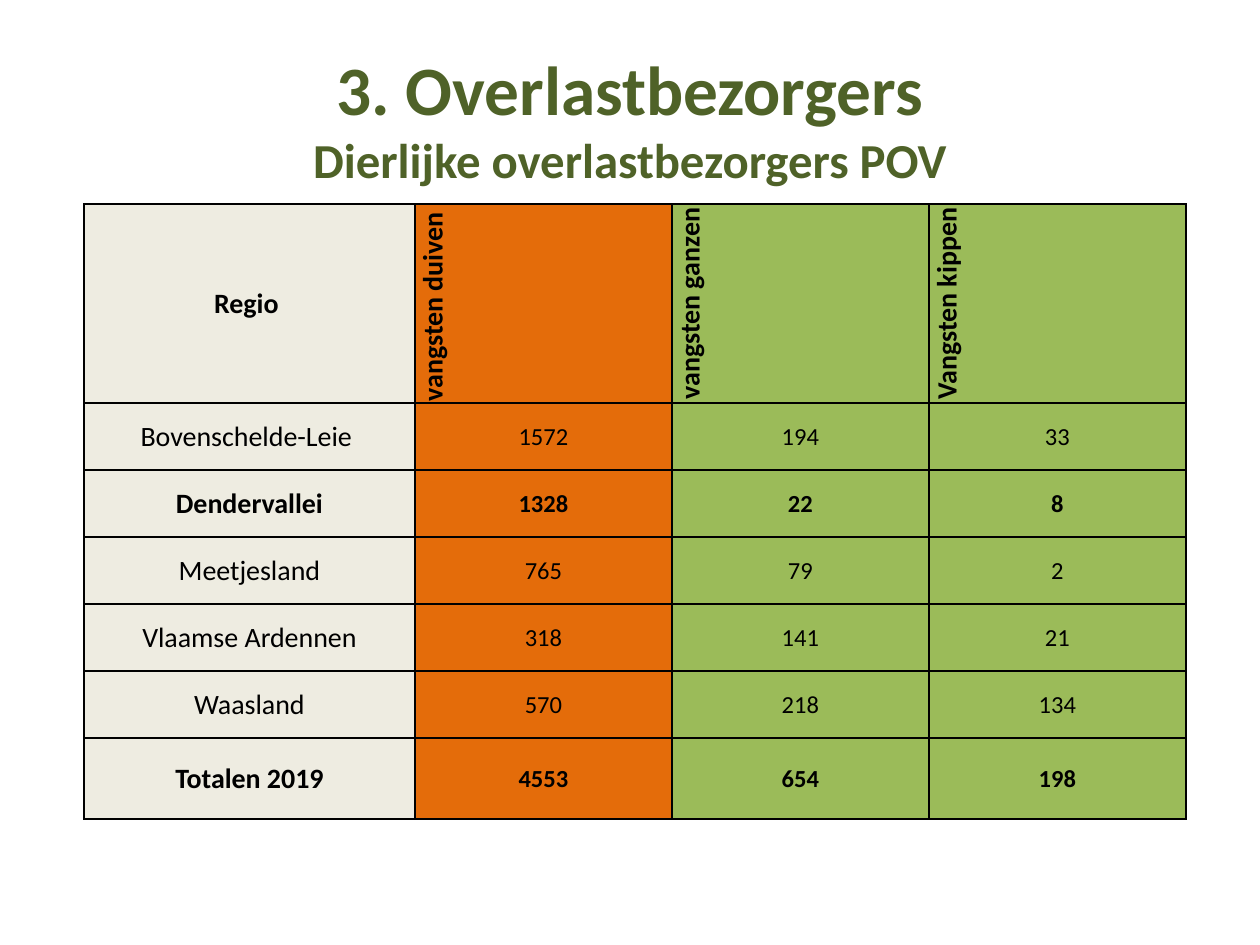
from dataclasses import dataclass

from lxml import etree
from pptx import Presentation
from pptx.dml.color import RGBColor
from pptx.enum.text import MSO_ANCHOR, MSO_AUTO_SIZE, PP_ALIGN
from pptx.oxml.ns import qn
from pptx.slide import Slide
from pptx.table import _Cell
from pptx.util import Emu, Pt

MIDDLE = MSO_ANCHOR.MIDDLE
CENTER = PP_ALIGN.CENTER
NO_AUTOFIT = MSO_AUTO_SIZE.NONE
PX_PER_INCH = 126


@dataclass(frozen=True)
class Theme:
    font: str = "Calibri"
    title: str = "4F6228"
    text: str = "000000"
    border: str = "000000"
    region: str = "EEECE1"
    pigeons: str = "E46C0A"
    poultry: str = "9BBB59"
    title_size: float = 39.6
    subtitle_size: float = 27.9
    label_size: int = 16
    value_size: int = 14


@dataclass(frozen=True)
class Row:
    cells: tuple[str, ...]
    height: int = 67
    bold: bool = False
    header: bool = False


THEME = Theme()
COLUMN_FILLS = (THEME.region, THEME.pigeons, THEME.poultry, THEME.poultry)
COLUMN_WIDTHS = (331, 257, 257, 257)
ROWS = (
    Row(("Regio ", "vangsten duiven ", "vangsten ganzen", "Vangsten kippen "),
        height=170, bold=True, header=True),
    Row(("Bovenschelde-Leie ", "1572", "194", "33")),
    Row(("Dendervallei", "1328", "22", "8"), bold=True),
    Row(("Meetjesland", "765", "79", "2")),
    Row(("Vlaamse Ardennen", "318", "141", "21")),
    Row(("Waasland", "570", "218", "134")),
    Row(("Totalen 2019", "4553", "654", "198"), height=81, bold=True),
)


def px(n: int) -> Emu:
    return Emu(round(n * 914400 / PX_PER_INCH))


def add_title(s: Slide, title: str, subtitle: str) -> None:
    sp = s.shapes.title
    sp.left, sp.top, sp.width, sp.height = px(63), px(38), px(1134), px(158)
    tf = sp.text_frame
    tf.auto_size = NO_AUTOFIT
    tf.vertical_anchor = MIDDLE
    p = tf.paragraphs[0]
    p.alignment = CENTER
    for text, size in ((title, THEME.title_size), (subtitle, THEME.subtitle_size)):
        if p.runs:
            p.add_line_break()
        r = p.add_run()
        r.text = text
        r.font.size = Pt(size)
    p.font.name = THEME.font
    p.font.bold = True
    p.font.color.rgb = RGBColor.from_string(THEME.title)
    for r in p.runs:
        r.font.bold = True


def add_borders(cell: _Cell) -> None:
    tc_pr = cell._tc.get_or_add_tcPr()
    for side in ("a:lnL", "a:lnR", "a:lnT", "a:lnB"):
        ln = etree.SubElement(tc_pr, qn(side), w=str(Pt(1)))
        fill = etree.SubElement(ln, qn("a:solidFill"))
        etree.SubElement(fill, qn("a:srgbClr"), val=THEME.border)


def fill_cell(cell: _Cell, text: str, fill: str, size: int, bold: bool, vertical: bool) -> None:
    add_borders(cell)
    cell.fill.solid()
    cell.fill.fore_color.rgb = RGBColor.from_string(fill)
    cell.vertical_anchor = MIDDLE
    cell.margin_left = cell.margin_right = cell.margin_top = px(1)
    cell.margin_bottom = 0
    if vertical:
        cell._tc.get_or_add_tcPr().set("vert", "vert270")
    p = cell.text_frame.paragraphs[0]
    p.text = text
    p.alignment = CENTER
    p.font.name = THEME.font
    p.font.size = Pt(size)
    p.font.bold = bold
    p.font.color.rgb = RGBColor.from_string(THEME.text)


def add_catch_table(s: Slide, left: int, top: int) -> None:
    width, height = sum(COLUMN_WIDTHS), sum(row.height for row in ROWS)
    table = s.shapes.add_table(len(ROWS), len(COLUMN_WIDTHS),
                               px(left), px(top), px(width), px(height)).table
    table.first_row = table.horz_banding = False
    for column, column_width in zip(table.columns, COLUMN_WIDTHS):
        column.width = px(column_width)
    for i, row in enumerate(ROWS):
        table.rows[i].height = px(row.height)
        for j, (text, fill) in enumerate(zip(row.cells, COLUMN_FILLS)):
            size = THEME.label_size if row.header or j == 0 else THEME.value_size
            fill_cell(table.cell(i, j), text, fill, size, row.bold, row.header and j > 0)


def main() -> None:
    prs = Presentation()
    prs.slide_width, prs.slide_height = px(1260), px(945)
    s = prs.slides.add_slide(prs.slide_layouts[5])
    add_title(s, "3. Overlastbezorgers", "Dierlijke overlastbezorgers POV")
    add_catch_table(s, 84, 204)
    prs.save("out.pptx")


if __name__ == "__main__":
    main()
